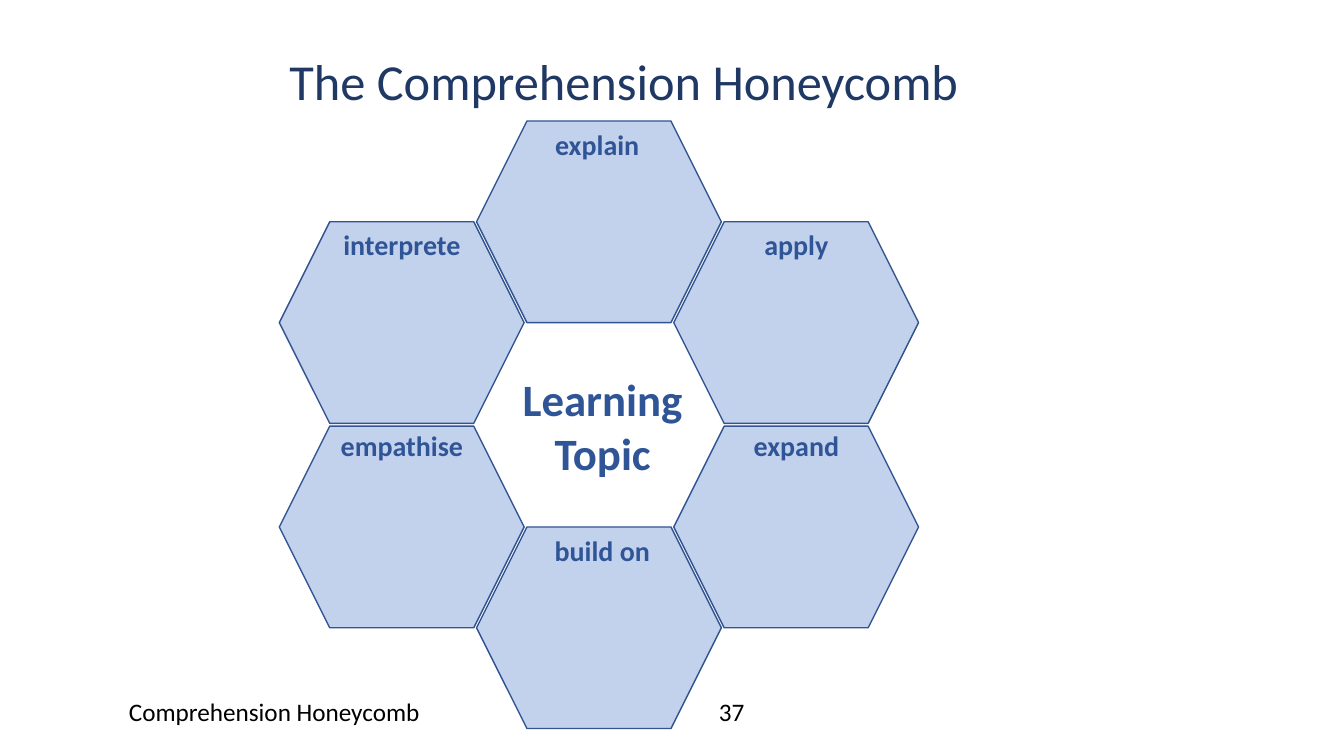
from lxml import etree
from pptx import Presentation
from pptx.dml.color import RGBColor
from pptx.enum.shapes import MSO_SHAPE
from pptx.enum.text import MSO_ANCHOR, MSO_AUTO_SIZE, PP_ALIGN
from pptx.oxml.ns import qn
from pptx.util import Cm, Pt

HEXAGON = MSO_SHAPE.HEXAGON
TOP = MSO_ANCHOR.TOP
LEFT, CENTER = PP_ALIGN.LEFT, PP_ALIGN.CENTER
NO_RESIZE, GROW = MSO_AUTO_SIZE.NONE, MSO_AUTO_SIZE.SHAPE_TO_FIT_TEXT

BLACK = RGBColor(0x00, 0x00, 0x00)
NAVY = RGBColor(0x20, 0x38, 0x64)
LABEL_BLUE = RGBColor(0x2F, 0x55, 0x97)
CELL_BLUE = RGBColor(0x44, 0x72, 0xC4)
OUTLINE_BLUE = RGBColor(0x32, 0x54, 0x91)

TITLE = {"size": Pt(36), "bold": False, "color": NAVY}
TOPIC = {"size": Pt(32), "bold": True, "color": LABEL_BLUE}
LABEL = {"size": Pt(20), "bold": True, "color": LABEL_BLUE}
FOOTER = {"size": Pt(18), "bold": False, "color": BLACK}

CELL_WIDTH, CELL_HEIGHT = 6.17, 5.08
FIRST_LEFT, COLUMN_STEP = 7.04, 4.97
ROW_TOPS = (3.05, 5.59, 10.74, 13.28)
CELLS = (
    ("empathise", 0, 2, 0.79, -0.07),
    ("build on", 1, 3, 0.87, 0.03),
    ("interprete", 0, 1, 0.79, 0.03),
    ("explain", 1, 0, 0.74, 0.05),
    ("apply", 2, 1, 0.79, 0.03),
    ("expand", 2, 2, 0.79, -0.07),
)


class HoneycombSlide:
    font_name = "Calibri"
    cell_opacity = 32

    def __init__(self, presentation):
        self.slide = presentation.slides.add_slide(presentation.slide_layouts[5])

    def set_text(self, shape, text, style, alignment, auto_size):
        frame = shape.text_frame
        frame.text = text
        frame.word_wrap = True
        frame.auto_size = auto_size
        frame.vertical_anchor = TOP
        paragraph = frame.paragraphs[0]
        paragraph.alignment = alignment
        font = paragraph.runs[0].font
        font.name = self.font_name
        for name, value in style.items():
            if name == "color":
                font.color.rgb = value
            else:
                setattr(font, name, value)

    def title(self, text, left, top, width, height):
        shape = self.slide.shapes.title
        box = {"left": left, "top": top, "width": width, "height": height}
        for name, value in box.items():
            setattr(shape, name, Cm(value))
        self.set_text(shape, text, TITLE, LEFT, GROW)

    def text(self, text, left, top, width, height, style,
             alignment=CENTER, auto_size=GROW):
        shape = self.slide.shapes.add_textbox(
            Cm(left), Cm(top), Cm(width), Cm(height))
        self.set_text(shape, text, style, alignment, auto_size)

    def cell(self, left, top):
        shape = self.slide.shapes.add_shape(
            HEXAGON, Cm(left), Cm(top), Cm(CELL_WIDTH), Cm(CELL_HEIGHT))
        shape.shadow.inherit = False
        shape.fill.solid()
        shape.fill.fore_color.rgb = CELL_BLUE
        color = shape.element.spPr.find(qn("a:solidFill"))[0]
        alpha = etree.SubElement(color, qn("a:alpha"))
        alpha.set("val", str(self.cell_opacity * 1000))
        shape.line.color.rgb = OUTLINE_BLUE
        shape.line.width = Pt(1)


def main():
    presentation = Presentation()
    presentation.slide_width = Cm(33.87)
    presentation.slide_height = Cm(19.05)

    honeycomb = HoneycombSlide(presentation)
    honeycomb.title("The Comprehension Honeycomb", 7.04, 1.14, 19.56, 1.8)
    honeycomb.text("Comprehension Honeycomb", 3, 17.42, 11.43, 1.02,
                   FOOTER, LEFT, NO_RESIZE)
    honeycomb.text("37", 14.63, 17.42, 7.62, 1.02, FOOTER, CENTER, NO_RESIZE)

    places = [(text, FIRST_LEFT + column * COLUMN_STEP, ROW_TOPS[row], inset, drop)
              for text, column, row, inset, drop in CELLS]
    for _, left, top, _, _ in places:
        honeycomb.cell(left, top)
    honeycomb.text("Learning Topic", 12.75, 9.25, 4.88, 3, TOPIC)
    for text, left, top, inset, drop in places:
        honeycomb.text(text, left + inset, top + drop, 4.6, 1.12, LABEL)

    presentation.save("out.pptx")


if __name__ == "__main__":
    main()
